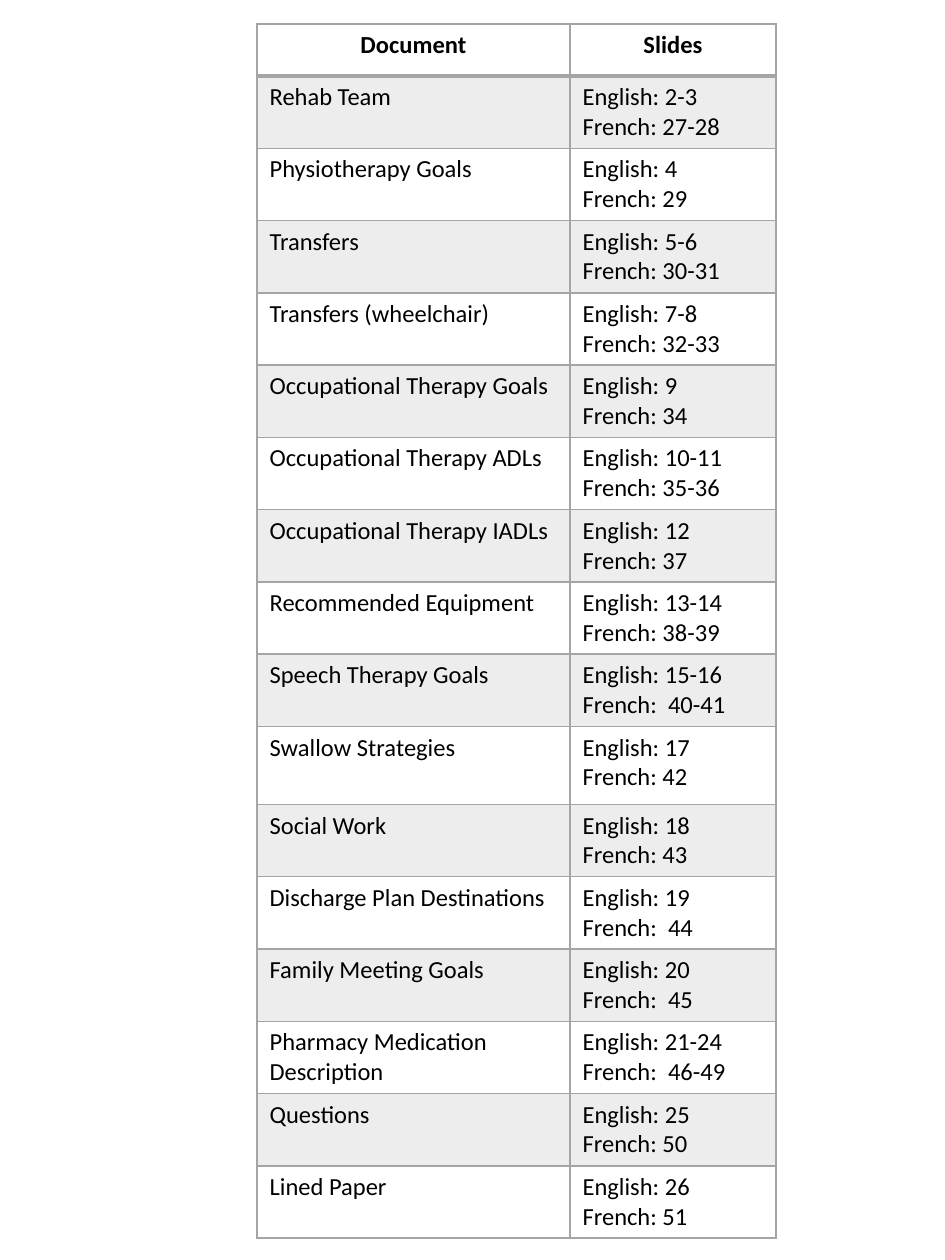
from dataclasses import dataclass

import pptx
import pptx.dml.color
import pptx.enum.text
import pptx.oxml
import pptx.oxml.ns
import pptx.util

EMU_PER_PX = 914400 / 126


@dataclass(frozen=True)
class Theme:
    font: str = "Calibri"
    size: int = 14
    text: str = "000000"
    grey: str = "A5A5A5"
    band_alpha: int = 20
    line: int = 1
    header_line: int = 2


@dataclass(frozen=True)
class Entry:
    document: str
    english: str
    french: str
    height: int = 72


THEME = Theme()
SLIDE_W, SLIDE_H = 945, 1260
LEFT, TOP = 257, 24
COLUMNS = (313, 206)
HEADER_H = 52
HEADINGS = ("Document", "Slides")
ENTRIES = (
    Entry("Rehab Team", "English: 2-3", "French: 27-28"),
    Entry("Physiotherapy Goals", "English: 4", "French: 29"),
    Entry("Transfers ", "English: 5-6", "French: 30-31"),
    Entry("Transfers (wheelchair)", "English: 7-8", "French: 32-33"),
    Entry("Occupational Therapy Goals", "English: 9", "French: 34"),
    Entry("Occupational Therapy ADLs", "English: 10-11", "French: 35-36"),
    Entry("Occupational Therapy IADLs", "English: 12", "French: 37"),
    Entry("Recommended Equipment", "English: 13-14", "French: 38-39"),
    Entry("Speech Therapy Goals", "English: 15-16", "French:  40-41"),
    Entry("Swallow Strategies", "English: 17", "French: 42", 78),
    Entry("Social Work", "English: 18", "French: 43"),
    Entry("Discharge Plan Destinations", "English: 19", "French:  44"),
    Entry("Family Meeting Goals", "English: 20", "French:  45"),
    Entry("Pharmacy Medication Description", "English: 21-24", "French:  46-49"),
    Entry("Questions", "English: 25", "French: 50"),
    Entry("Lined Paper", "English: 26", "French: 51"),
)


def px(n: int) -> pptx.util.Emu:
    return pptx.util.Emu(round(n * EMU_PER_PX))


def set_borders(cell, top: int, bottom: int) -> None:
    """Draw the four edges; they must come before the fill in tcPr."""
    tc_pr = cell._tc.get_or_add_tcPr()
    widths = {"L": THEME.line, "R": THEME.line, "T": top, "B": bottom}
    for i, (side, width) in enumerate(widths.items()):
        tc_pr.insert(i, pptx.oxml.parse_xml(
            f'<a:ln{side} {pptx.oxml.ns.nsdecls("a")} w="{pptx.util.Pt(width)}">'
            f'<a:solidFill><a:srgbClr val="{THEME.grey}"/></a:solidFill>'
            f'</a:ln{side}>'))


def set_fill(cell, banded: bool) -> None:
    if not banded:
        cell.fill.background()
        return
    cell.fill.solid()
    cell.fill.fore_color.rgb = pptx.dml.color.RGBColor.from_string(THEME.grey)
    color = cell._tc.tcPr.find(".//" + pptx.oxml.ns.qn("a:srgbClr"))
    color.append(pptx.oxml.parse_xml(
        f'<a:alpha {pptx.oxml.ns.nsdecls("a")} val="{THEME.band_alpha * 1000}"/>'))


def set_text(cell, lines: tuple[str, ...], header: bool) -> None:
    font_format = {"name": THEME.font, "size": pptx.util.Pt(THEME.size), "bold": header}
    tf = cell.text_frame
    for i, line in enumerate(lines):
        p = tf.add_paragraph() if i else tf.paragraphs[0]
        if header:
            p.alignment = pptx.enum.text.PP_ALIGN.CENTER
        r = p.add_run()
        r.text = line
        for name, value in font_format.items():
            setattr(r.font, name, value)
        r.font.color.rgb = pptx.dml.color.RGBColor.from_string(THEME.text)


def add_contents_table(s) -> None:
    rows = [tuple((heading,) for heading in HEADINGS)]
    rows += [((e.document,), (e.english, e.french)) for e in ENTRIES]
    heights = [HEADER_H] + [e.height for e in ENTRIES]
    table = s.shapes.add_table(len(rows), len(COLUMNS), px(LEFT), px(TOP),
                               px(sum(COLUMNS)), px(sum(heights))).table
    for column, width in zip(table.columns, COLUMNS):
        column.width = px(width)
    for i, (row, height) in enumerate(zip(rows, heights)):
        table.rows[i].height = px(height)
        for j, lines in enumerate(row):
            cell = table.cell(i, j)
            set_text(cell, lines, header=i == 0)
            set_fill(cell, banded=i % 2 == 1)
            set_borders(cell,
                        top=THEME.header_line if i == 1 else THEME.line,
                        bottom=THEME.header_line if i == 0 else THEME.line)


def main() -> None:
    prs = pptx.Presentation()
    prs.slide_width, prs.slide_height = px(SLIDE_W), px(SLIDE_H)
    s = prs.slides.add_slide(prs.slide_layouts[6])
    add_contents_table(s)
    prs.save("out.pptx")


if __name__ == "__main__":
    main()
